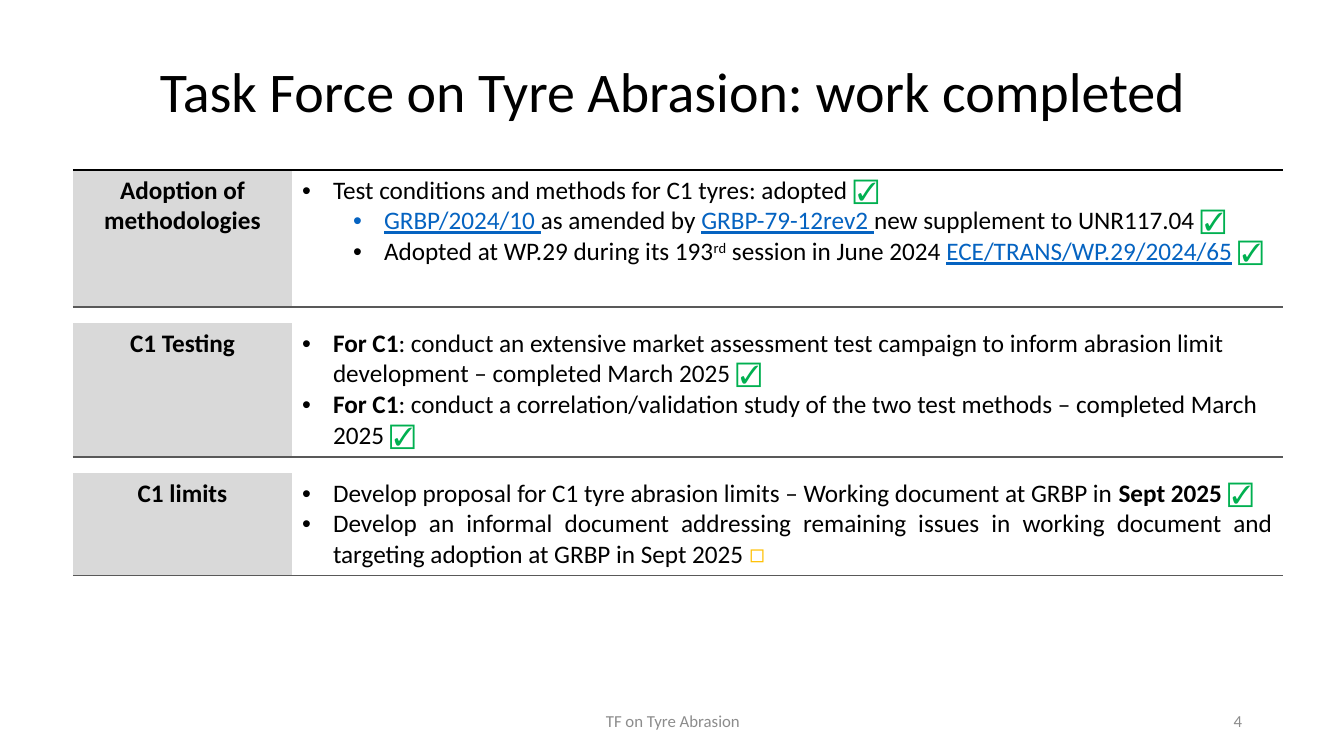
from pptx import Presentation
from pptx.dml.color import RGBColor
from pptx.enum.text import MSO_ANCHOR as ANCHOR, MSO_AUTO_SIZE as AUTOSIZE, PP_ALIGN as ALIGN
from pptx.oxml import parse_xml
from pptx.oxml.ns import nsdecls
from pptx.util import Pt


def px(n):
    return round(n * 12192000 / 1344)


def add_run(p, text, size=18, color="000000", baseline=None, **fmt):
    r = p.add_run()
    r.text = text
    for name, value in {"name": "Calibri", "size": Pt(size), **fmt}.items():
        setattr(r.font, name, value)
    r.font.color.rgb = RGBColor.from_string(color)
    if baseline:
        r.font._element.set("baseline", str(baseline))


BOLD = {"bold": True}
LINK = {"color": "0563C1", "underline": True}
DONE = ("☑", {"color": "00B050"})
OPEN = ("◻", {"color": "FFC000"})
GREY, LINE, BLACK = "D9D9D9", "595959", "000000"

sections = [
    ("Adoption of methodologies", 137, [
        (0, ALIGN.LEFT, [("Test conditions and methods for C1 tyres: adopted ", {}), DONE]),
        (1, ALIGN.LEFT, [
            ("GRBP/2024/10 ", LINK), ("as amended by ", {}), ("GRBP-79-12rev2 ", LINK),
            ("new supplement to UNR117.04 ", {}), DONE]),
        (1, ALIGN.LEFT, [
            ("Adopted at WP.29 during its 193", {}), ("rd", {"baseline": 30000}),
            (" session in June 2024 ", {}), ("ECE/TRANS/WP.29/2024/65", LINK), (" ", {}), DONE]),
    ]),
    ("C1 Testing", 134, [
        (0, ALIGN.LEFT, [
            ("For C1", BOLD),
            (": conduct an extensive market assessment test campaign to inform abrasion limit "
             "development – completed March 2025 ", {}), DONE]),
        (0, ALIGN.LEFT, [
            ("For C1", BOLD),
            (": conduct a correlation/validation study of the two test methods – completed "
             "March 2025 ", {}), DONE]),
    ]),
    ("C1 limits", 102, [
        (0, ALIGN.LEFT, [
            ("Develop proposal for C1 tyre abrasion limits – Working document at GRBP in ", {}),
            ("Sept 2025 ", BOLD), DONE]),
        (0, ALIGN.JUSTIFY, [
            ("Develop an informal document addressing remaining issues in working document and "
             "targeting adoption at GRBP in Sept 2025 ", {}), OPEN]),
    ]),
]

prs = Presentation()
prs.slide_width, prs.slide_height = px(1344), px(756)
s = prs.slides.add_slide(prs.slide_layouts[5])

title = s.shapes.title
title.left, title.top, title.width, title.height = px(93), px(21), px(1159), px(146)
tf = title.text_frame
for name, value in {"word_wrap": True, "auto_size": AUTOSIZE.NONE,
                    "vertical_anchor": ANCHOR.MIDDLE}.items():
    setattr(tf, name, value)
p = tf.paragraphs[0]
p.alignment, p.line_spacing = ALIGN.CENTER, 0.9
add_run(p, "Task Force on Tyre Abrasion: work completed", size=40)

GAP = 16
heights = [GAP] * (2 * len(sections) - 1)
heights[::2] = [height for _, height, _ in sections]
frame = s.shapes.add_table(len(heights), 2, px(73), px(170), px(1210), px(sum(heights)))
table = frame.table
for name in ("first_row", "horz_banding"):
    setattr(table, name, False)
table._tbl.tblPr.find("{*}tableStyleId").text = "{2D5ABB26-0587-4C30-8999-92F81FD0307C}"
for column, width in zip(table.columns, (219, 991)):
    column.width = px(width)

for i, height in enumerate(heights):
    table.rows[i].height = px(height)
    label, body = table.cell(i, 0), table.cell(i, 1)
    label.fill.solid()
    label.fill.fore_color.rgb = RGBColor.from_string("FFFFFF" if i % 2 else GREY)
    body.fill.background()
    if i % 2:
        for cell in (label, body):
            cell.margin_top = cell.margin_bottom = 0
            end = cell.text_frame.paragraphs[0]._p.get_or_add_endParaRPr()
            end.set("sz", "400")
        continue

    heading, _, items = sections[i // 2]
    p = label.text_frame.paragraphs[0]
    p.alignment = ALIGN.CENTER
    add_run(p, heading, **BOLD)
    tf = body.text_frame
    for n, (level, align, runs) in enumerate(items):
        p = tf.add_paragraph() if n else tf.paragraphs[0]
        p.level, p.alignment = level, align
        pPr = p._p.get_or_add_pPr()
        pPr.set("marL", str(px(82 if level else 31)))
        pPr.set("indent", str(-px(31)))
        pPr.append(parse_xml(f'<a:buFont {nsdecls("a")} typeface="Arial"/>'))
        pPr.append(parse_xml(f'<a:buChar {nsdecls("a")} char="•"/>'))
        for text, fmt in runs:
            add_run(p, text, **fmt)

    edges = [("lnB", LINE)] + ([("lnT", BLACK)] if i == 0 else [])
    for cell in (label, body):
        for tag, color in edges:
            cell._tc.get_or_add_tcPr().insert(0, parse_xml(
                f'<a:{tag} {nsdecls("a")} w="12700"><a:solidFill>'
                f'<a:srgbClr val="{color}"/></a:solidFill></a:{tag}>'))

for text, left, width, align in (("TF on Tyre Abrasion", 446, 454, ALIGN.CENTER),
                                 ("4", 950, 302, ALIGN.RIGHT)):
    sp = s.shapes.add_textbox(px(left), px(701), px(width), px(40))
    tf = sp.text_frame
    tf.word_wrap, tf.vertical_anchor = True, ANCHOR.MIDDLE
    p = tf.paragraphs[0]
    p.alignment = align
    add_run(p, text, size=12, color="8C8C8C")

prs.save("out.pptx")
